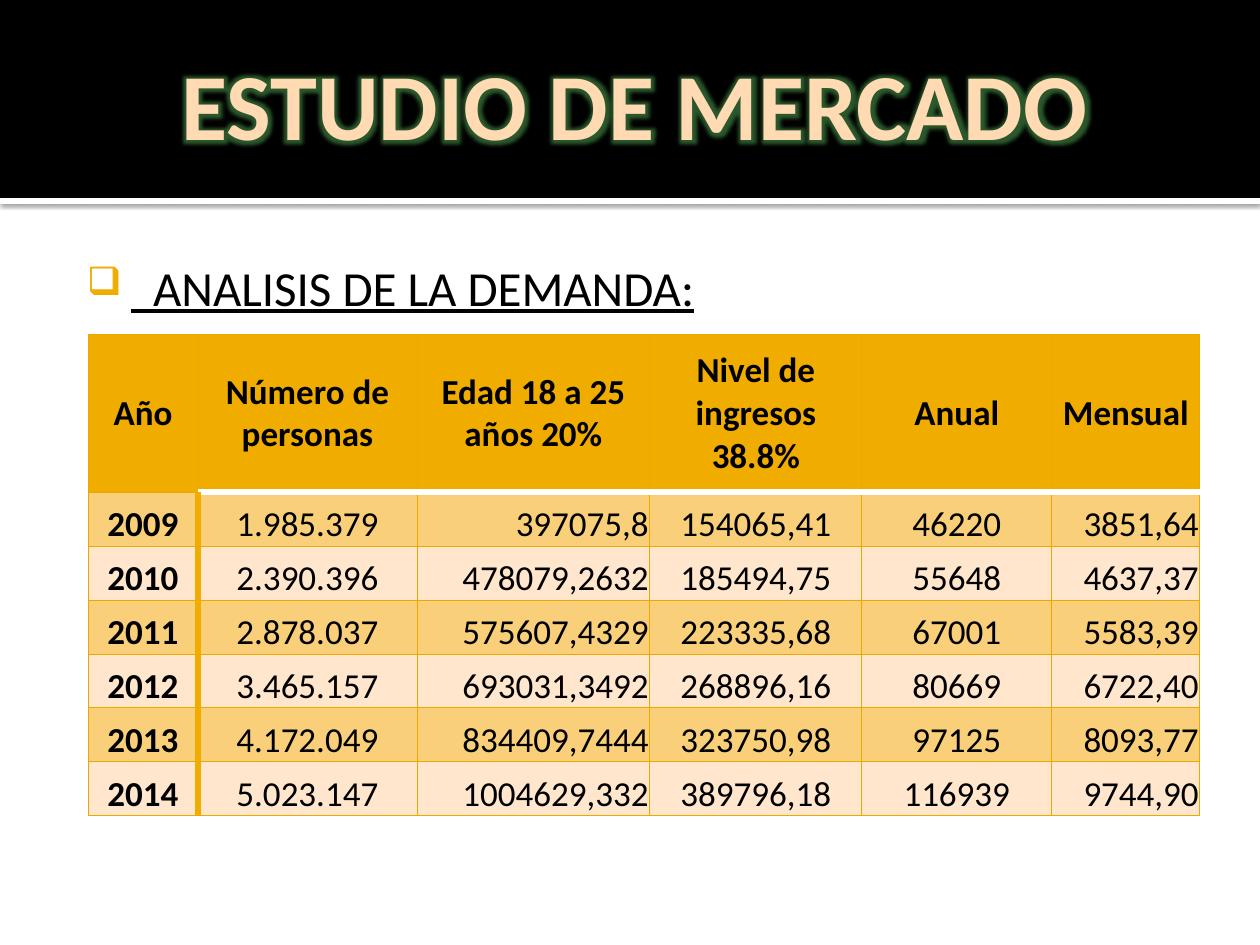
"""Build the market study slide with its demand analysis table."""
from dataclasses import dataclass

from lxml.etree import SubElement
from pptx import Presentation
from pptx.dml.color import RGBColor
from pptx.enum.shapes import MSO_SHAPE
from pptx.enum.text import MSO_ANCHOR, PP_ALIGN
from pptx.oxml import parse_xml
from pptx.oxml.ns import nsdecls, qn
from pptx.util import Emu, Pt


@dataclass(frozen=True)
class Theme:
    font: str = "Calibri"
    black: str = "000000"
    white: str = "FFFFFF"
    title: str = "FFDAB2"
    glow: str = "479249"
    gold: str = "F0AD00"
    grid: str = "EBA900"
    dark_band: str = "F9CF7A"
    light_band: str = "FFE6CC"
    title_size: int = 54
    heading_size: int = 28
    table_size: int = 20
    thin: float = 0.5
    thick: float = 3.78


def px(value):
    return Emu(round(value * 914400 / 126))


def add_text(paragraph, text, size, color, bold=False):
    run = paragraph.add_run()
    run.text = text
    run.font.name = theme.font
    run.font.size = Pt(size)
    run.font.bold = bold
    run.font.color.rgb = RGBColor.from_string(color)
    return run


theme = Theme()
presentation = Presentation()
presentation.slide_width = px(1260)
presentation.slide_height = px(945)
slide = presentation.slides.add_slide(presentation.slide_layouts[6])

for top, height, color in ((198, 6, theme.white), (0, 198, theme.black)):
    band = slide.shapes.add_shape(MSO_SHAPE.RECTANGLE, 0, px(top), px(1260), px(height))
    band.shadow.inherit = False
    band.fill.solid()
    band.fill.fore_color.rgb = RGBColor.from_string(color)
    band.line.fill.background()
    if color == theme.white:
        band._element.spPr.find(qn("a:effectLst")).append(parse_xml(
            f'<a:outerShdw {nsdecls("a")} blurRad="{Pt(2.5)}" dist="{Pt(0.8)}" dir="5400000">'
            f'<a:srgbClr val="{theme.black}"><a:alpha val="60000"/></a:srgbClr></a:outerShdw>'))

title = slide.shapes.add_textbox(px(78), px(39), px(1113), px(127))
title.text_frame.word_wrap = True
title.text_frame.vertical_anchor = MSO_ANCHOR.MIDDLE
paragraph = title.text_frame.paragraphs[0]
paragraph.alignment = PP_ALIGN.CENTER
run = add_text(paragraph, "ESTUDIO DE MERCADO", theme.title_size, theme.title, True)
run.font.fill._xPr.find(qn("a:solidFill")).addnext(parse_xml(
    f'<a:effectLst {nsdecls("a")}><a:glow rad="{Pt(8)}"><a:srgbClr val="{theme.glow}">'
    '<a:alpha val="60000"/></a:srgbClr></a:glow></a:effectLst>'))

header = ["Año", "Número de personas", "Edad 18 a 25 años 20%",
          "Nivel de ingresos 38.8%", "Anual", "Mensual"]
records = [
    ["2009", "1.985.379", "397075,8", "154065,41", "46220", "3851,64"],
    ["2010", "2.390.396", "478079,2632", "185494,75", "55648", "4637,37"],
    ["2011", "2.878.037", "575607,4329", "223335,68", "67001", "5583,39"],
    ["2012", "3.465.157", "693031,3492", "268896,16", "80669", "6722,40"],
    ["2013", "4.172.049", "834409,7444", "323750,98", "97125", "8093,77"],
    ["2014", "5.023.147", "1004629,332", "389796,18", "116939", "9744,90"],
]
column_widths = [110, 219, 233, 212, 190, 148]
row_heights = [158] + [54] * len(records)
right_aligned = (2, 5)

table = slide.shapes.add_table(len(row_heights), len(column_widths), px(88), px(334),
                               px(sum(column_widths)), px(sum(row_heights))).table
for column, width in zip(table.columns, column_widths):
    column.width = px(width)
for row, height in zip(table.rows, row_heights):
    row.height = px(height)

for row_index, values in enumerate([header] + records):
    is_header = row_index == 0
    for column_index, value in enumerate(values):
        cell = table.cell(row_index, column_index)
        cell.margin_left = cell.margin_right = cell.margin_top = px(1)
        cell.margin_bottom = 0
        cell.vertical_anchor = MSO_ANCHOR.MIDDLE if is_header else MSO_ANCHOR.BOTTOM

        borders = {side: (theme.grid, theme.thin) for side in ("L", "R", "T", "B")}
        if column_index == 0:
            if not is_header:
                borders["R"] = (theme.gold, theme.thick)
        else:
            if is_header:
                borders["B"] = (theme.white, theme.thick)
            elif column_index == 1:
                borders["L"] = (theme.gold, theme.thick)
            if row_index == 1:
                borders["T"] = (theme.white, theme.thick)
        properties = cell._tc.get_or_add_tcPr()
        for side, (color, width) in borders.items():
            line = SubElement(properties, qn(f"a:ln{side}"), w=str(Pt(width)))
            fill = SubElement(line, qn("a:solidFill"))
            SubElement(fill, qn("a:srgbClr"), val=color)

        band_color = theme.dark_band if row_index % 2 else theme.light_band
        cell.fill.solid()
        cell.fill.fore_color.rgb = RGBColor.from_string(theme.gold if is_header else band_color)
        paragraph = cell.text_frame.paragraphs[0]
        to_right = column_index in right_aligned and not is_header
        paragraph.alignment = PP_ALIGN.RIGHT if to_right else PP_ALIGN.CENTER
        add_text(paragraph, value, theme.table_size, theme.black, is_header or column_index == 0)

heading = slide.shapes.add_textbox(px(63), px(244), px(1134), px(78))
heading.text_frame.word_wrap = True
heading.text_frame.margin_left = px(8)
heading.text_frame.margin_top = px(13)
paragraph = heading.text_frame.paragraphs[0]
run = add_text(paragraph, "  ANALISIS DE LA DEMANDA:", theme.heading_size, theme.black)
run.font.underline = True
bullet = paragraph._p.get_or_add_pPr()
bullet.set("marL", str(px(60)))
bullet.set("indent", str(px(-44)))
bullet_color = SubElement(bullet, qn("a:buClr"))
SubElement(bullet_color, qn("a:srgbClr"), val=theme.gold)
SubElement(bullet, qn("a:buSzPct"), val="80000")
SubElement(bullet, qn("a:buChar"), char="❑")

presentation.save("out.pptx")
